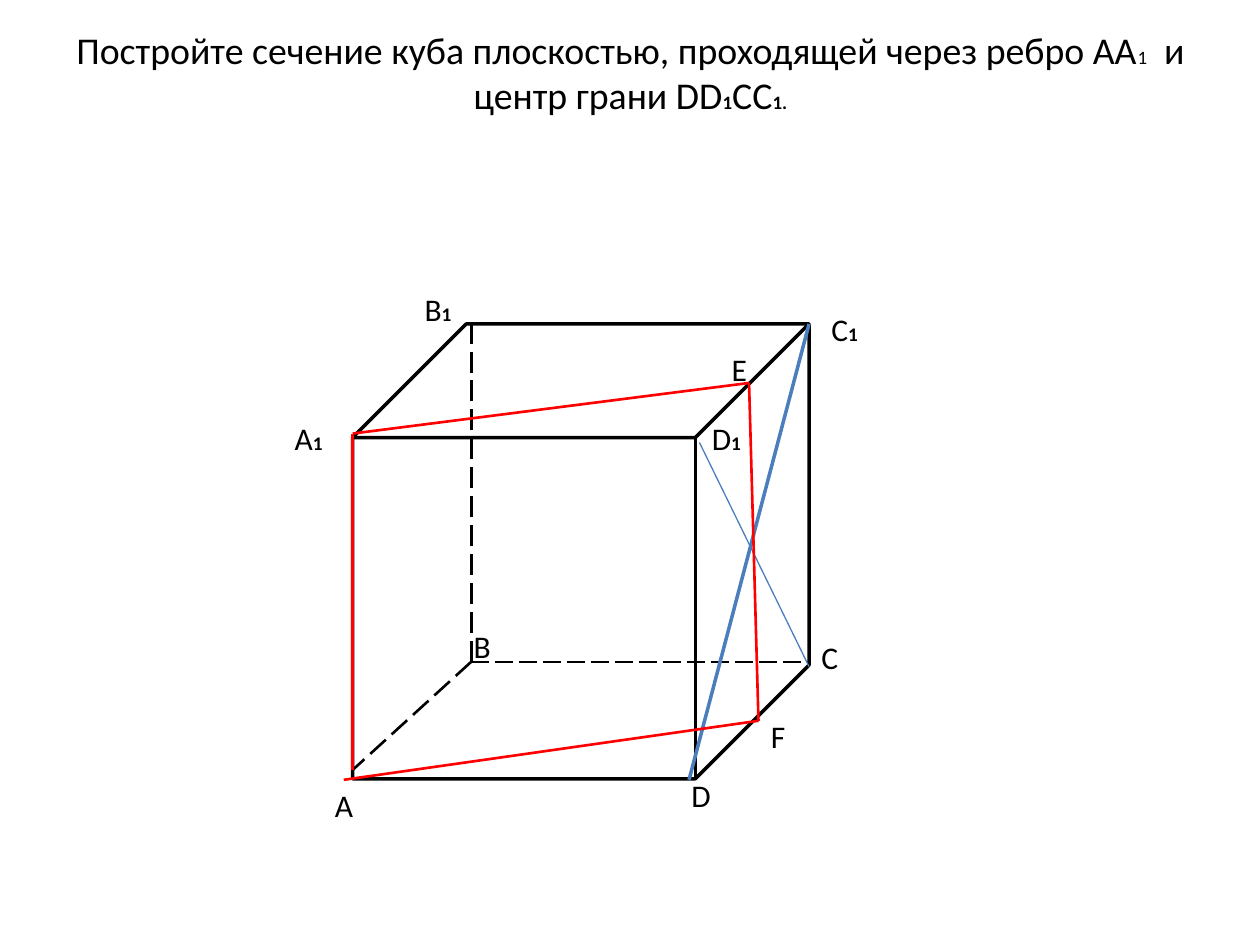
from pptx import Presentation
from pptx.dml.color import RGBColor
from pptx.enum.dml import MSO_LINE
from pptx.enum.shapes import MSO_CONNECTOR, MSO_SHAPE
from pptx.enum.text import MSO_ANCHOR, MSO_AUTO_SIZE, PP_ALIGN
from pptx.oxml.ns import qn
from pptx.util import Cm, Pt
from lxml import etree

BLACK = RGBColor(0x00, 0x00, 0x00)
RED = RGBColor(0xFF, 0x00, 0x00)
BLUE = RGBColor(0x4B, 0x7E, 0xBC)
CUBE = MSO_SHAPE.CUBE
STRAIGHT = MSO_CONNECTOR.STRAIGHT
LONG_DASH = MSO_LINE.LONG_DASH
MIDDLE = MSO_ANCHOR.MIDDLE
FIXED_SIZE = MSO_AUTO_SIZE.NONE
FIT_SHAPE = MSO_AUTO_SIZE.SHAPE_TO_FIT_TEXT
CENTER = PP_ALIGN.CENTER


class GeometrySlide:
    font_name = "Calibri"
    title_size, title_index_size = 21.6, 10.8
    label_size, label_index_size = 18, 11
    label_height = 1.02

    def __init__(self, presentation):
        self.slide = presentation.slides.add_slide(presentation.slide_layouts[5])

    def add_text(self, paragraph, text, size, bold=False):
        run = paragraph.add_run()
        run.text = text
        run.font.size = Pt(size)
        run.font.bold = bold

    def set_font(self, paragraph):
        paragraph.font.name = self.font_name
        paragraph.font.color.rgb = BLACK

    def title(self, left, top, width, height, pieces):
        heading = self.slide.shapes.title
        heading.left, heading.top = Cm(left), Cm(top)
        heading.width, heading.height = Cm(width), Cm(height)
        frame = heading.text_frame
        frame.word_wrap = True
        frame.auto_size = FIXED_SIZE
        frame.vertical_anchor = MIDDLE
        paragraph = frame.paragraphs[0]
        paragraph.alignment = CENTER
        self.set_font(paragraph)
        for text, size, bold in pieces:
            self.add_text(paragraph, text, size, bold)

    def cube(self, left, top, width, height):
        body = self.slide.shapes.add_shape(
            CUBE, Cm(left), Cm(top), Cm(width), Cm(height))
        body.shadow.inherit = False
        body.fill.background()
        body.line.color.rgb = BLACK
        body.line.width = Pt(2)

    def segment(self, start, end, color, width, dash=None):
        edge = self.slide.shapes.add_connector(
            STRAIGHT, *(Cm(value) for value in (*start, *end)))
        edge.line.color.rgb = color
        edge.line.width = Pt(width)
        if dash:
            edge.line.dash_style = dash
        etree.SubElement(edge._element.spPr, qn("a:effectLst"))

    def label(self, letter, index, left, top, width):
        box = self.slide.shapes.add_textbox(
            Cm(left), Cm(top), Cm(width), Cm(self.label_height))
        frame = box.text_frame
        frame.word_wrap = True
        frame.auto_size = FIT_SHAPE
        paragraph = frame.paragraphs[0]
        self.set_font(paragraph)
        self.add_text(paragraph, letter, self.label_size)
        if index:
            self.add_text(paragraph, index, self.label_index_size, True)


def main():
    presentation = Presentation()
    presentation.slide_width, presentation.slide_height = Cm(25.4), Cm(19.05)
    task = GeometrySlide(presentation)

    # Problem statement
    size, index_size = task.title_size, task.title_index_size
    task.title(0.71, 0.76, 24, 1.37, [
        ("Постройте сечение куба плоскостью, проходящей через ребро АА", size, False),
        ("1  ", index_size, False),
        (" и центр грани DD", size, False),
        ("1", index_size, True),
        ("CC", size, False),
        ("1.", index_size, True),
    ])

    # Cube with its hidden edges, which meet at vertex B
    left, top, right = 7.11, 6.53, 16.31
    task.cube(left, top, right - left, 9.17)
    vertex_b = (9.5, 13.34)
    for end, width in (((9.5, top), 1.5), ((right, 13.34), 1.25), ((left, 15.52), 1.5)):
        task.segment(vertex_b, end, BLACK, width, LONG_DASH)

    # Diagonals of the face DD1C1C
    task.segment((14.1, 8.92), (right, 13.44), BLUE, 0.75)
    task.segment((right, top), (13.89, 15.72), BLUE, 0)

    # Section A A1 E F
    point_a1, point_e, point_f = (left, 8.74), (15.1, 7.72), (15.29, 14.53)
    for start, end in (
        (point_a1, (left, 15.52)),
        (point_e, point_f),
        (point_a1, point_e),
        ((6.93, 15.72), point_f),
    ):
        task.segment(start, end, RED, 1.5)

    # Point names: letter, index, left, top, width
    for point in (
        ("A", "", 6.5, 15.72, 0.89),
        ("B", "", 9.3, 12.52, 1.12),
        ("C", "", 16.31, 12.73, 1.07),
        ("D", "", 13.69, 15.52, 0.91),
        ("A", "1", 5.69, 8.33, 1.32),
        ("B", "1", 8.31, 5.72, 1.7),
        ("C", "1", 16.51, 6.12, 1.4),
        ("D", "1", 14.1, 8.33, 1.6),
        ("E", "", 14.5, 6.93, 0.81),
        ("F", "", 15.29, 14.33, 0.91),
    ):
        task.label(*point)

    presentation.save("out.pptx")


if __name__ == "__main__":
    main()
